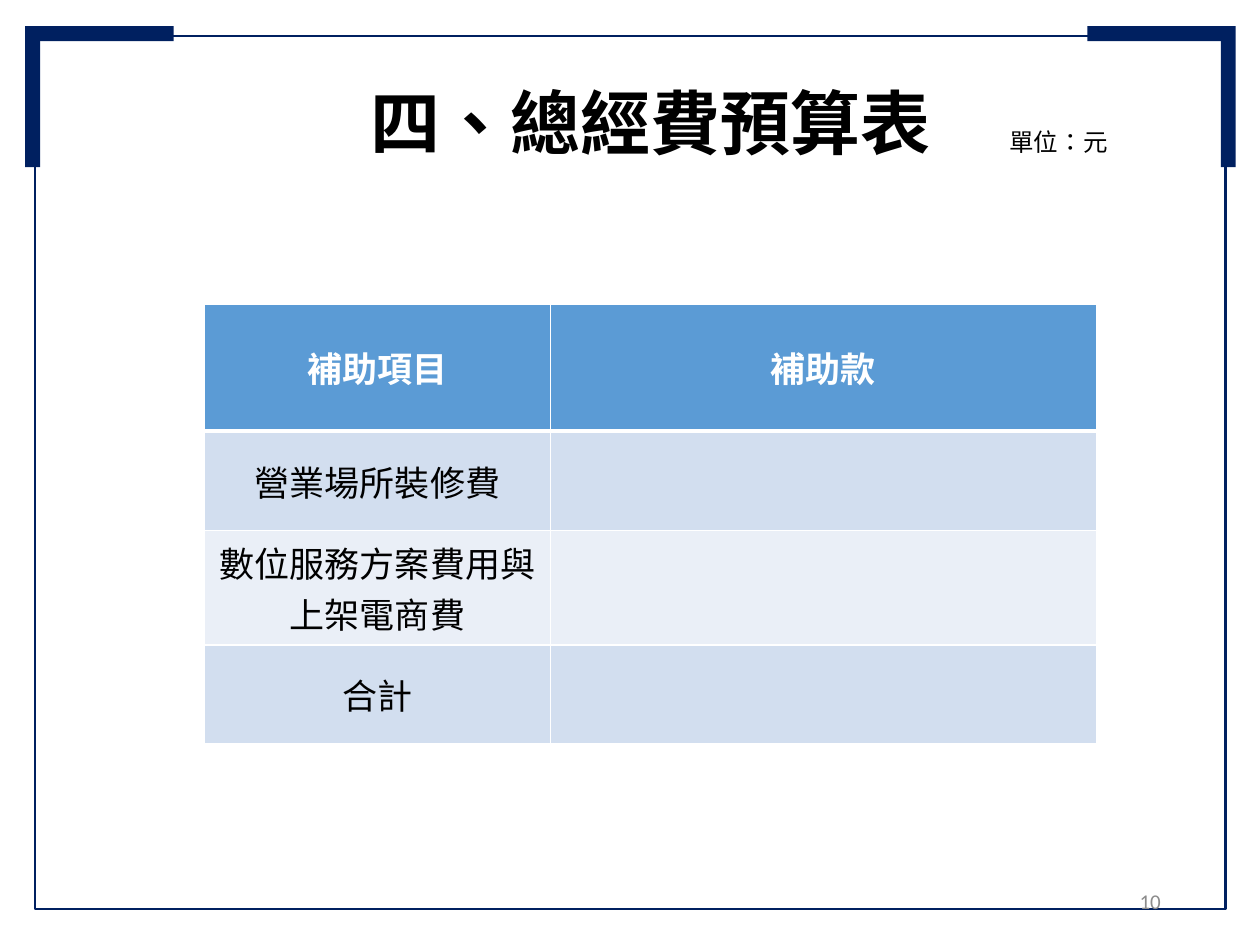
from lxml import etree
from pptx import Presentation
from pptx.dml.color import RGBColor
from pptx.enum.lang import MSO_LANGUAGE_ID
from pptx.enum.shapes import MSO_SHAPE
from pptx.enum.text import MSO_ANCHOR, PP_ALIGN
from pptx.oxml.ns import qn
from pptx.util import Cm, Pt

RECTANGLE = MSO_SHAPE.RECTANGLE
MIDDLE, TOP = MSO_ANCHOR.MIDDLE, MSO_ANCHOR.TOP
LEFT, CENTER, RIGHT = PP_ALIGN.LEFT, PP_ALIGN.CENTER, PP_ALIGN.RIGHT
CHINESE = MSO_LANGUAGE_ID.TRADITIONAL_CHINESE

CJK_FONT = "Noto Sans CJK SC"
COLORS = {
    "navy": "002060", "black": "000000", "white": "FFFFFF", "gray": "8C8C8C",
    "header": "5B9BD5", "band_dark": "D2DEEF", "band_light": "EAEFF7",
}
# Row height in cm, then the cell texts
ROWS = [
    (2.56, ("補助項目", "補助款")),
    (2, ("營業場所裝修費", "")),
    (2.31, ("數位服務方案費用與上架電商費", "")),
    (2, ("合計", "")),
]


def color(name):
    return RGBColor.from_string(COLORS[name])


def write(frame, text, size, ink="black", bold=False, align=LEFT, font=CJK_FONT):
    """Fill a text frame with one formatted paragraph."""
    para = frame.paragraphs[0]
    para.text = text
    para.alignment = align
    para.font.size = Pt(size)
    para.font.bold = bold
    para.font.color.rgb = color(ink)
    para.font.name = font
    latin = para._p.pPr.find(qn("a:defRPr")).find(qn("a:latin"))
    east_asian = etree.Element(qn("a:ea"), typeface=font)
    latin.addnext(east_asian)
    # The language selects the Traditional Chinese punctuation forms
    for span in para.runs:
        span.font.language_id = CHINESE


def add_rectangle(page, left, top, width, height):
    box = page.shapes.add_shape(RECTANGLE, Cm(left), Cm(top), Cm(width), Cm(height))
    box.shadow.inherit = False
    return box


def add_frame(page, left, top, width, height):
    """Thin border with a heavy bracket at each upper corner."""
    border = add_rectangle(page, left, top, width, height)
    border.fill.background()
    border.line.color.rgb = color("navy")
    border.line.width = Pt(1.5)

    length, thick, outset = 2.84, 0.3, 0.2
    right = left + width
    bars = [
        (left - 0.05, length, thick),
        (left - outset, thick, length),
        (right + 0.05 - length, length, thick),
        (right + outset - thick, thick, length),
    ]
    for bar_left, bar_width, bar_height in bars:
        bar = add_rectangle(page, bar_left, top - outset, bar_width, bar_height)
        bar.fill.solid()
        bar.fill.fore_color.rgb = color("navy")
        bar.line.fill.background()


def add_title(page, left, top, width, height):
    title = page.shapes.title
    title.left, title.top = Cm(left), Cm(top)
    title.width, title.height = Cm(width), Cm(height)
    title.text_frame.vertical_anchor = MIDDLE
    write(title.text_frame, "四、總經費預算表", 40, bold=True, align=CENTER)


def add_label(page, left, top, width, height, text, size, anchor=TOP, **style):
    label = page.shapes.add_textbox(Cm(left), Cm(top), Cm(width), Cm(height))
    label.text_frame.word_wrap = True
    label.text_frame.vertical_anchor = anchor
    write(label.text_frame, text, size, **style)


def set_borders(cell, top_width, bottom_width):
    widths = {"lnL": 1, "lnR": 1, "lnT": top_width, "lnB": bottom_width}
    properties = cell._tc.get_or_add_tcPr()
    for index, (side, width) in enumerate(widths.items()):
        line = etree.Element(qn(f"a:{side}"), w=str(Pt(width)))
        fill = etree.SubElement(line, qn("a:solidFill"))
        etree.SubElement(fill, qn("a:srgbClr"), val=COLORS["white"])
        properties.insert(index, line)


def add_budget_table(page, left, top, width):
    first_column = 6.98
    height = sum(row_height for row_height, _ in ROWS)
    table = page.shapes.add_table(
        len(ROWS), 2, Cm(left), Cm(top), Cm(width), Cm(height)).table
    table.columns[0].width = Cm(first_column)
    table.columns[1].width = Cm(width - first_column)

    for row, (row_height, texts) in enumerate(ROWS):
        is_header = row == 0
        table.rows[row].height = Cm(row_height)
        band = "header" if is_header else "band_dark" if row % 2 else "band_light"
        for column, text in enumerate(texts):
            cell = table.cell(row, column)
            cell.vertical_anchor = MIDDLE
            cell.fill.solid()
            cell.fill.fore_color.rgb = color(band)
            # A heavier rule parts the header from the body
            set_borders(cell, 3 if row == 1 else 1, 3 if is_header else 1)
            write(cell.text_frame, text, 20, "white" if is_header else "black",
                  bold=is_header, align=CENTER)


def main():
    deck = Presentation()
    deck.slide_width, deck.slide_height = Cm(25.4), Cm(19.05)
    page = deck.slides.add_slide(deck.slide_layouts[5])

    add_frame(page, 0.71, 0.73, 24, 17.6)
    # Page number
    add_label(page, 17.93, 17.65, 5.72, 1.02, "10", 12, MIDDLE,
              ink="gray", align=RIGHT, font="Calibri")
    add_title(page, 1.68, 1.17, 22.86, 2.57)
    add_budget_table(page, 4.12, 6.13, 17.98)
    # Unit of the amounts
    add_label(page, 20.1, 2.44, 4.4, 0.86, "單位：元", 14)

    deck.save("out.pptx")


if __name__ == "__main__":
    main()
